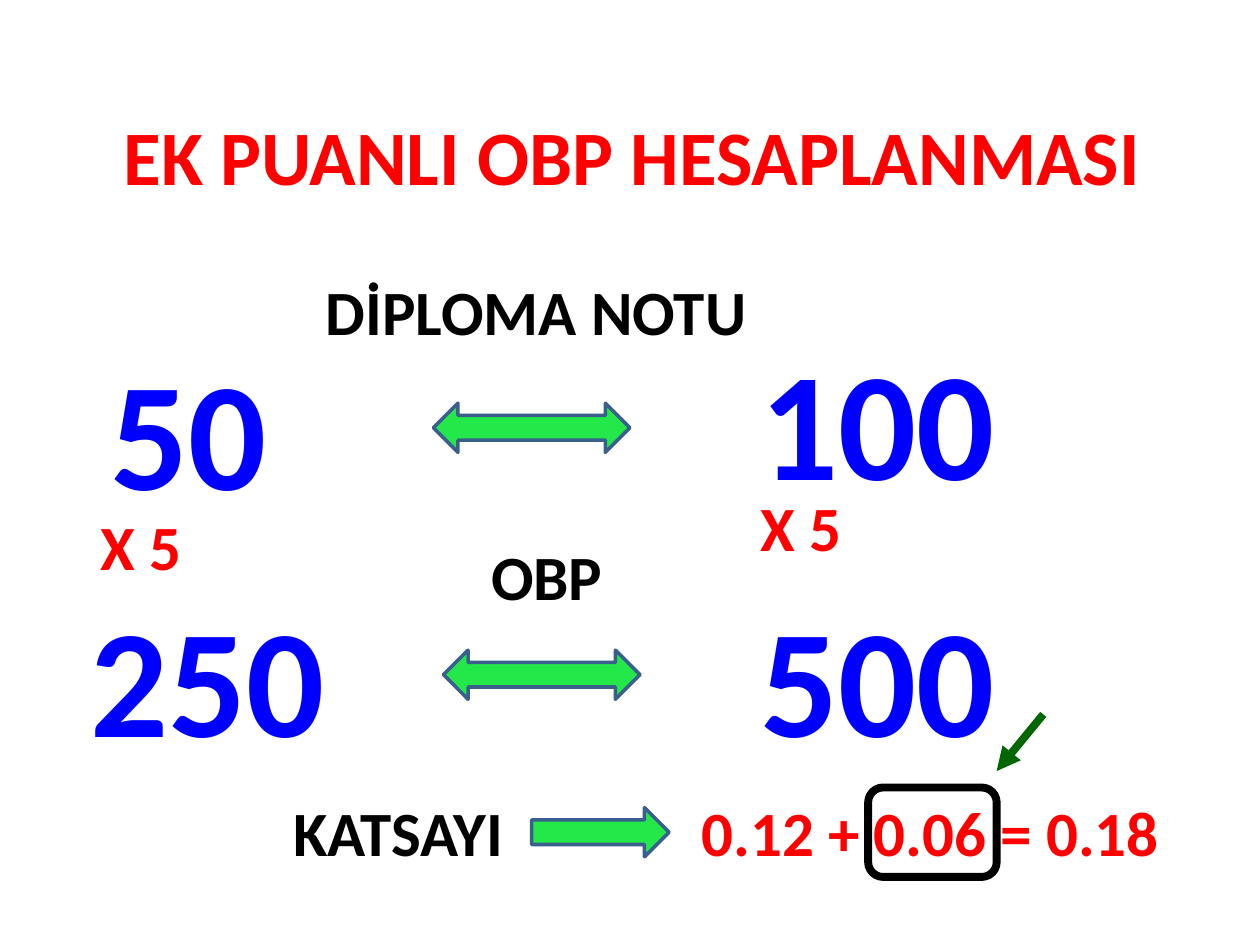
from pptx import Presentation
from pptx.util import Inches, Pt
from pptx.dml.color import RGBColor as Rgb
from pptx.enum.shapes import MSO_CONNECTOR as Conn, MSO_SHAPE as Kind
from pptx.enum.text import MSO_ANCHOR as Anchor, MSO_AUTO_SIZE as Fit, PP_ALIGN as Align
from pptx.oxml.ns import qn
from lxml.etree import SubElement as Sub

HEX = {
    "red": "FF0000",
    "blue": "0000FF",
    "black": "000000",
    "green": "24E849",
    "edge": "3A5F8C",
    "dark": "006600",
}


def tint(name):
    return Rgb.from_string(HEX[name])


def place(shape, box):
    shape.left, shape.top, shape.width, shape.height = map(Inches, box)


def write(shape, text, size, color, align=Align.LEFT):
    frame = shape.text_frame
    frame.text = text
    frame.word_wrap = True
    frame.auto_size = Fit.NONE
    para = frame.paragraphs[0]
    para.alignment = align
    font = para.runs[0].font
    font.name = "Calibri"
    font.size = Pt(size)
    font.bold = True
    font.color.rgb = tint(color)


def label(slide, text, box, color, align=Align.LEFT):
    shape = slide.shapes.add_textbox(*map(Inches, box))
    write(shape, text, 36, color, align)


def score(shape, text):
    write(shape, text, 88, "blue")
    frame = shape.text_frame
    frame.vertical_anchor = Anchor.TOP
    frame.margin_top = Inches(0.72)
    frame.margin_bottom = 0
    para = frame.paragraphs[0]
    para.space_before = Pt(0)


def plain(shape):
    props = shape.text_frame.paragraphs[0]._p.get_or_add_pPr()
    props.set("marL", "0")
    props.set("indent", "0")
    Sub(props, qn("a:buNone"))


def block(slide, kind, box, fill, edge, width):
    shape = slide.shapes.add_shape(kind, *map(Inches, box))
    shape.shadow.inherit = False
    if fill:
        shape.fill.solid()
        shape.fill.fore_color.rgb = tint(fill)
    else:
        shape.fill.background()
    shape.line.color.rgb = tint(edge)
    shape.line.width = Pt(width)


def pointer(slide, start, end):
    line = slide.shapes.add_connector(Conn.STRAIGHT, *map(Inches, start + end))
    line.line.color.rgb = tint("dark")
    line.line.width = Pt(4.5)
    Sub(line.line._get_or_add_ln(), qn("a:tailEnd"), type="triangle")
    Sub(line._element.spPr, qn("a:effectLst"))


def main():
    deck = Presentation()
    deck.slide_width, deck.slide_height = Inches(10), Inches(7.5)
    slide = deck.slides.add_slide(deck.slide_layouts[1])

    title, body = slide.placeholders
    place(title, (0.52, 0.21, 9, 2.03))
    write(title, "EK PUANLI OBP HESAPLANMASI", 44, "red", Align.CENTER)
    title.text_frame.vertical_anchor = Anchor.MIDDLE

    place(body, (0.78, 1.95, 2.34, 1.95))
    score(body, "50")
    plain(body)
    for text, left, top in (("100", 5.94, 1.87), ("250", 0.62, 3.91), ("500", 5.94, 3.91)):
        box = map(Inches, (left, top, 2.34, 1.95))
        score(slide.shapes.add_textbox(*box), text)

    for text, left, top, width in (
        ("DİPLOMA NOTU", 2.42, 2.11, 3.67),
        ("OBP", 3.05, 4.22, 2.58),
        ("KATSAYI", 1.87, 6.25, 2.58),
    ):
        label(slide, text, (left, top, width, 0.71), "black", Align.CENTER)

    for text, left, top, width in (
        ("X 5", 0.7, 3.98, 2.58),
        ("X 5", 5.94, 3.83, 2.58),
        ("0.12 + 0.06 = 0.18", 5.47, 6.25, 4.05),
    ):
        label(slide, text, (left, top, width, 0.71), "red")

    for kind, left, top, width in (
        (Kind.LEFT_RIGHT_ARROW, 3.44, 3.2, 1.56),
        (Kind.LEFT_RIGHT_ARROW, 3.52, 5.16, 1.56),
        (Kind.RIGHT_ARROW, 4.22, 6.41, 1.09),
    ):
        block(slide, kind, (left, top, width, 0.39), "green", "edge", 2)

    block(slide, Kind.ROUNDED_RECTANGLE, (6.89, 6.25, 1.02, 0.71), None, "black", 4.5)
    pointer(slide, (8.28, 5.67), (7.91, 6.12))
    deck.save("out.pptx")


if __name__ == "__main__":
    main()
